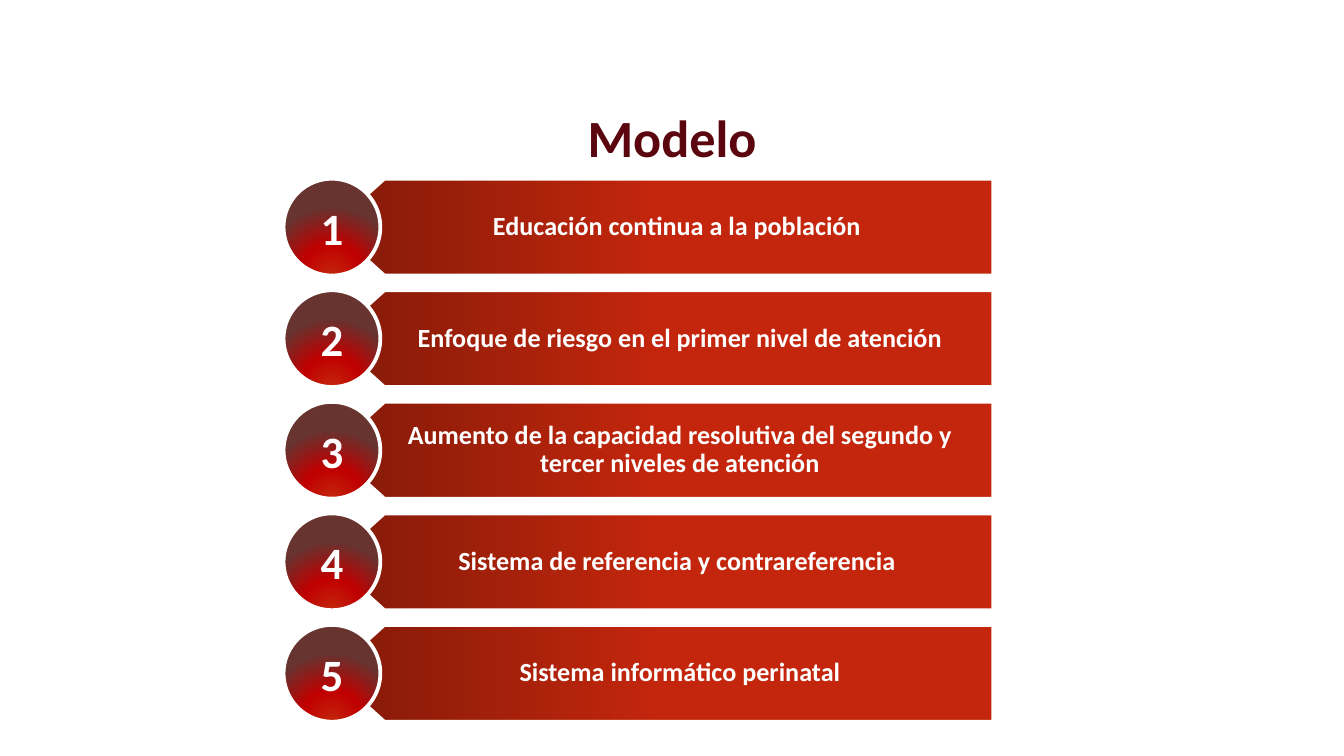
import dataclasses

import lxml.etree
import pptx
import pptx.dml.color
import pptx.enum.shapes
import pptx.enum.text
import pptx.oxml.ns
import pptx.util

Inches = pptx.util.Inches
Pt = pptx.util.Pt

SLIDE_WIDTH = 10
SLIDE_HEIGHT = SLIDE_WIDTH * 9 / 16

FONT = "Calibri"
WHITE = "FFFFFF"
TITLE_COLOR = "5B060E"
BAR_STOPS = ((0, "821A08"), (50, "C3260C"), (100, "C3260C"))
BADGE_STOPS = ((0, "C3260C"), (46, "C00000"), (100, "673430"))

FIRST_TOP = 1.33
ROW_PITCH = 0.83
ROW_HEIGHT = 0.72
BADGE_LEFT = 2.11
BAR_LEFT = 2.46
BAR_SHOULDER = 2.86
BAR_RIGHT = 7.39


@dataclasses.dataclass(frozen=True)
class Step:
    number: int
    label: str

    @property
    def top(self) -> float:
        return FIRST_TOP + (self.number - 1) * ROW_PITCH


LABELS = (
    "Educación continua a la población ",
    "Enfoque de riesgo en el primer nivel de atención",
    "Aumento de la capacidad resolutiva del segundo y tercer niveles de atención",
    "Sistema de referencia y contrareferencia ",
    "Sistema informático perinatal",
)
STEPS = [Step(number, label) for number, label in enumerate(LABELS, start=1)]


def color(value: str) -> pptx.dml.color.RGBColor:
    return pptx.dml.color.RGBColor.from_string(value)


def add_element(parent, tag: str, **attributes):
    return lxml.etree.SubElement(parent, pptx.oxml.ns.qn(tag), **attributes)


def fill_gradient(shape, stops, radial: bool) -> None:
    shape.fill.background()
    empty_fill = shape.element.spPr.find(pptx.oxml.ns.qn("a:noFill"))
    gradient = lxml.etree.Element(pptx.oxml.ns.qn("a:gradFill"), rotWithShape="1")
    stop_list = add_element(gradient, "a:gsLst")
    for position, value in stops:
        stop = add_element(stop_list, "a:gs", pos=str(position * 1000))
        add_element(stop, "a:srgbClr", val=value)
    if radial:
        circle = add_element(gradient, "a:path", path="circle")
        add_element(circle, "a:fillToRect", l="50000", t="130000", r="50000", b="-30000")
    else:
        add_element(gradient, "a:lin", ang="0", scaled="0")
    shape.element.spPr.replace(empty_fill, gradient)


def style_shape(shape, stops, radial: bool = False) -> None:
    shape.shadow.inherit = False
    fill_gradient(shape, stops, radial)
    shape.line.color.rgb = color(WHITE)
    shape.line.width = Pt(2)


def write_text(shape, text: str, size: int, text_color: str) -> None:
    frame = shape.text_frame
    frame.text = text
    frame.word_wrap = True
    frame.vertical_anchor = pptx.enum.text.MSO_ANCHOR.MIDDLE
    paragraph = frame.paragraphs[0]
    paragraph.alignment = pptx.enum.text.PP_ALIGN.CENTER
    span = paragraph.runs[0]
    span.font.name = FONT
    span.font.size = Pt(size)
    span.font.bold = True
    span.font.color.rgb = color(text_color)


def draw_bar(page, step: Step) -> None:
    bottom = step.top + ROW_HEIGHT
    middle = step.top + ROW_HEIGHT / 2
    builder = page.shapes.build_freeform(Inches(BAR_RIGHT), Inches(bottom))
    corners = (
        (BAR_SHOULDER, bottom),
        (BAR_LEFT, middle),
        (BAR_SHOULDER, step.top),
        (BAR_RIGHT, step.top),
    )
    builder.add_line_segments([(Inches(x), Inches(y)) for x, y in corners], close=True)
    bar = builder.convert_to_shape()
    style_shape(bar, BAR_STOPS)
    write_text(bar, step.label, 14, WHITE)
    frame = bar.text_frame
    frame.margin_left = Inches(0.5)
    frame.margin_right = Inches(0.23)
    frame.margin_top = frame.margin_bottom = Inches(0.13)
    frame.paragraphs[0].line_spacing = 0.9


def draw_badge(page, step: Step) -> None:
    badge = page.shapes.add_shape(
        pptx.enum.shapes.MSO_SHAPE.OVAL,
        Inches(BADGE_LEFT), Inches(step.top), Inches(ROW_HEIGHT), Inches(ROW_HEIGHT),
    )
    style_shape(badge, BADGE_STOPS, radial=True)
    write_text(badge, str(step.number), 24, WHITE)


def draw_title(page) -> None:
    box = page.shapes.add_textbox(Inches(3.74), Inches(0.73), Inches(2.52), Inches(0.57))
    write_text(box, "Modelo", 28, TITLE_COLOR)
    box.text_frame.auto_size = pptx.enum.text.MSO_AUTO_SIZE.SHAPE_TO_FIT_TEXT


def main() -> None:
    deck = pptx.Presentation()
    deck.slide_width = Inches(SLIDE_WIDTH)
    deck.slide_height = Inches(SLIDE_HEIGHT)
    page = deck.slides.add_slide(deck.slide_layouts[6])
    for step in STEPS:
        draw_bar(page, step)
        draw_badge(page, step)
    draw_title(page)
    deck.save("out.pptx")


if __name__ == "__main__":
    main()
